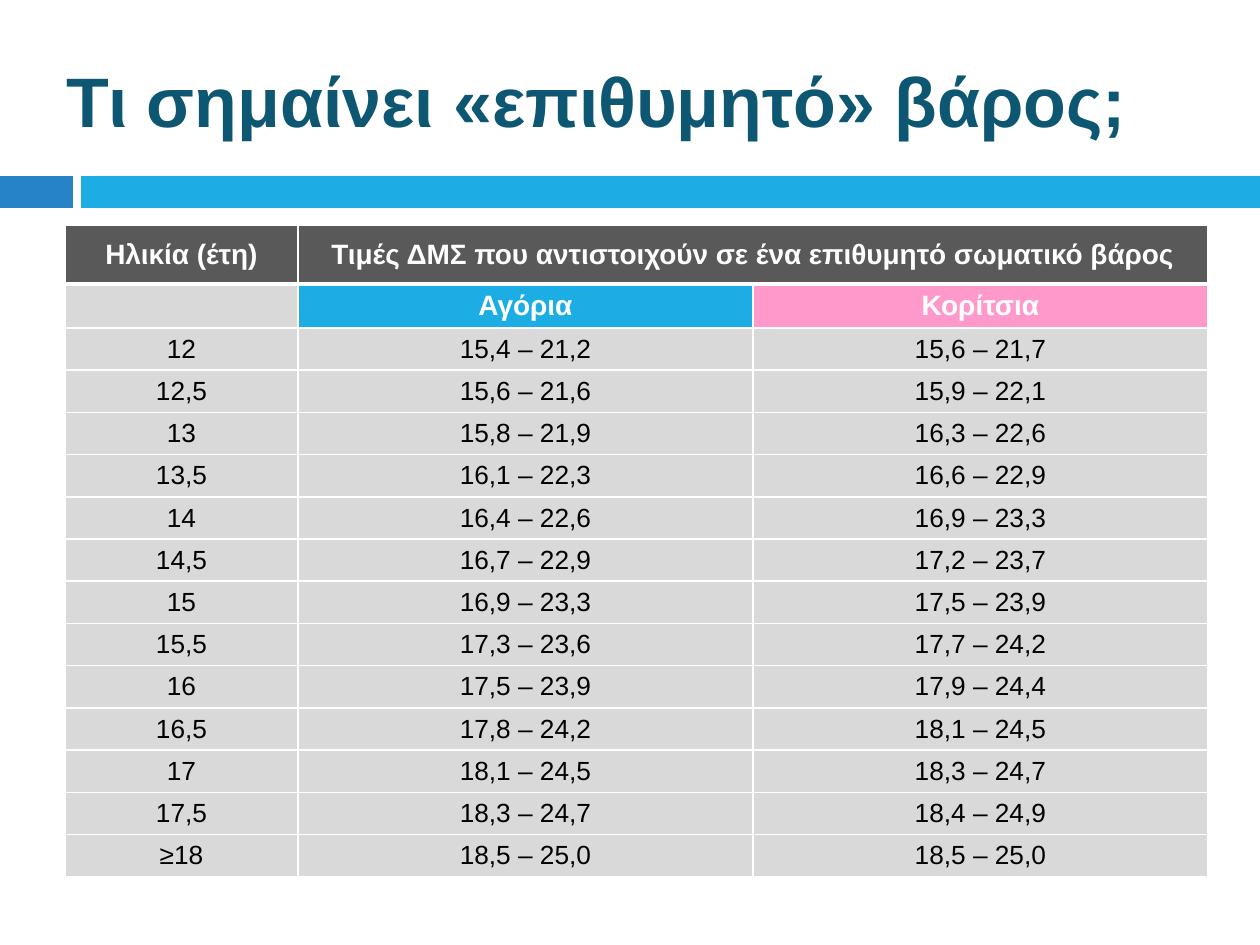
from dataclasses import dataclass

from lxml import etree
from pptx import Presentation
from pptx.dml.color import RGBColor
from pptx.enum import shapes, text
from pptx.oxml import ns
from pptx.util import Pt


@dataclass(frozen=True)
class Theme:
    font: str = "Arial"
    title: str = "0E5772"
    white: str = "FFFFFF"
    black: str = "000000"
    header: str = "595959"
    body: str = "D9D9D9"
    accent: str = "2683C6"
    boys: str = "1CADE4"
    girls: str = "FF99CC"
    title_size: int = 40
    header_size: int = 16
    body_size: int = 15


THEME = Theme()
SCALE = 914400 / 126


def px(length):
    return round(length * SCALE)


def write(frame, words, size, color, bold=False, align=text.PP_ALIGN.LEFT, before=0):
    frame.word_wrap = True
    paragraph = frame.paragraphs[0]
    paragraph.alignment = align
    paragraph.space_before = Pt(before)
    run = paragraph.add_run()
    run.text = words
    run.font.name = THEME.font
    run.font.size = Pt(size)
    run.font.bold = bold
    run.font.color.rgb = RGBColor.from_string(color)


deck = Presentation()
deck.slide_width, deck.slide_height = px(1260), px(945)
slide = deck.slides.add_slide(deck.slide_layouts[5])

for left, width, color in ((0, 73, THEME.accent), (81, 1179, THEME.boys)):
    band = slide.shapes.add_shape(
        shapes.MSO_SHAPE.RECTANGLE, px(left), px(176), px(width), px(32))
    band.shadow.inherit = False
    band.fill.solid()
    band.fill.fore_color.rgb = RGBColor.from_string(color)
    band.line.fill.background()

heading = slide.shapes.title
heading.left, heading.top, heading.width, heading.height = px(54), px(32), px(1153), px(136)
heading.text_frame.vertical_anchor = text.MSO_ANCHOR.MIDDLE
heading.text_frame.auto_size = text.MSO_AUTO_SIZE.NONE
write(heading.text_frame, "Τι σημαίνει «επιθυμητό» βάρος;",
      THEME.title_size, THEME.title, bold=True)

bmi_rows = [
    ("Ηλικία (έτη)", "Τιμές ΔΜΣ που αντιστοιχούν σε ένα επιθυμητό σωματικό βάρος", ""),
    ("", "Αγόρια", "Κορίτσια"),
    ("12", "15,4 – 21,2", "15,6 – 21,7"),
    ("12,5", "15,6 – 21,6", "15,9 – 22,1"),
    ("13", "15,8 – 21,9", "16,3 – 22,6"),
    ("13,5", "16,1 – 22,3", "16,6 – 22,9"),
    ("14", "16,4 – 22,6", "16,9 – 23,3"),
    ("14,5", "16,7 – 22,9", "17,2 – 23,7"),
    ("15", "16,9 – 23,3", "17,5 – 23,9"),
    ("15,5", "17,3 – 23,6", "17,7 – 24,2"),
    ("16", "17,5 – 23,9", "17,9 – 24,4"),
    ("16,5", "17,8 – 24,2", "18,1 – 24,5"),
    ("17", "18,1 – 24,5", "18,3 – 24,7"),
    ("17,5", "18,3 – 24,7", "18,4 – 24,9"),
    ("≥18", "18,5 – 25,0", "18,5 – 25,0"),
]
column_widths = (233, 455, 455)
header_height, subheader_height, body_bottom = 59, 44, 877
table_top = 225
body_count = len(bmi_rows) - 2
body_height = (body_bottom - table_top - header_height - subheader_height) / body_count

bmi = slide.shapes.add_table(
    len(bmi_rows), len(column_widths), px(65), px(table_top),
    px(sum(column_widths)), px(body_bottom - table_top)).table
for column, width in zip(bmi.columns, column_widths):
    column.width = px(width)
row_heights = [header_height, subheader_height] + [body_height] * body_count
for row, height in zip(bmi.rows, row_heights):
    row.height = px(height)
bmi.cell(0, 1).merge(bmi.cell(0, 2))

header_fills = {(1, 1): THEME.boys, (1, 2): THEME.girls}
for row_index, words_in_row in enumerate(bmi_rows):
    for column_index, words in enumerate(words_in_row):
        cell = bmi.cell(row_index, column_index)
        inset = px(6) if column_index == 0 and words else 0
        cell.margin_left = cell.margin_right = inset
        cell.margin_top = cell.margin_bottom = inset
        cell.vertical_anchor = text.MSO_ANCHOR.MIDDLE
        is_header = row_index < 2
        if words:
            write(cell.text_frame, words,
                  THEME.header_size if is_header else THEME.body_size,
                  THEME.white if is_header else THEME.black,
                  bold=is_header, align=text.PP_ALIGN.CENTER, before=12)

        properties = cell._tc.get_or_add_tcPr()
        thick_side = {0: "lnB", 1: "lnT"}.get(row_index)
        for side in ("lnL", "lnR", "lnT", "lnB"):
            weight = Pt(3 if side == thick_side else 1)
            border = etree.SubElement(properties, ns.qn(f"a:{side}"), w=str(weight))
            paint = etree.SubElement(border, ns.qn("a:solidFill"))
            etree.SubElement(paint, ns.qn("a:srgbClr"), val=THEME.white)

        default_fill = THEME.header if row_index == 0 else THEME.body
        cell.fill.solid()
        cell.fill.fore_color.rgb = RGBColor.from_string(
            header_fills.get((row_index, column_index), default_fill))

deck.save("out.pptx")
